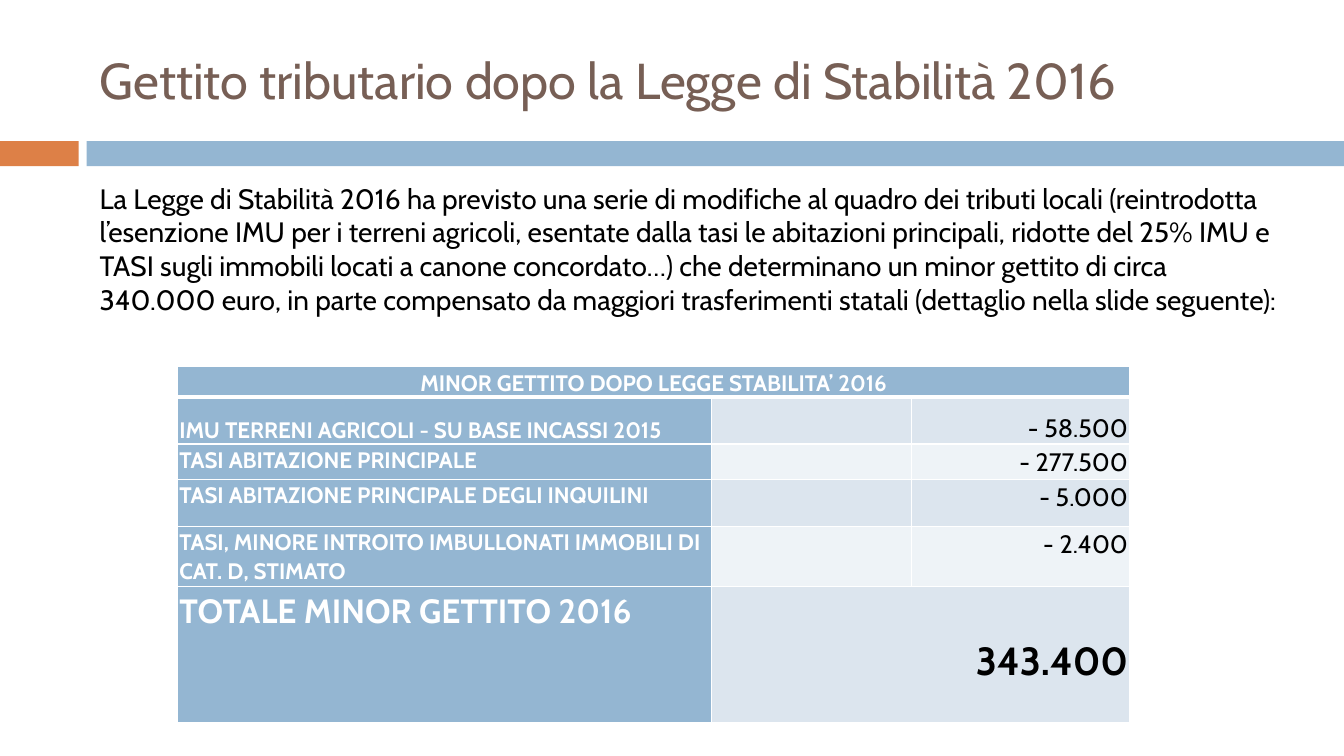
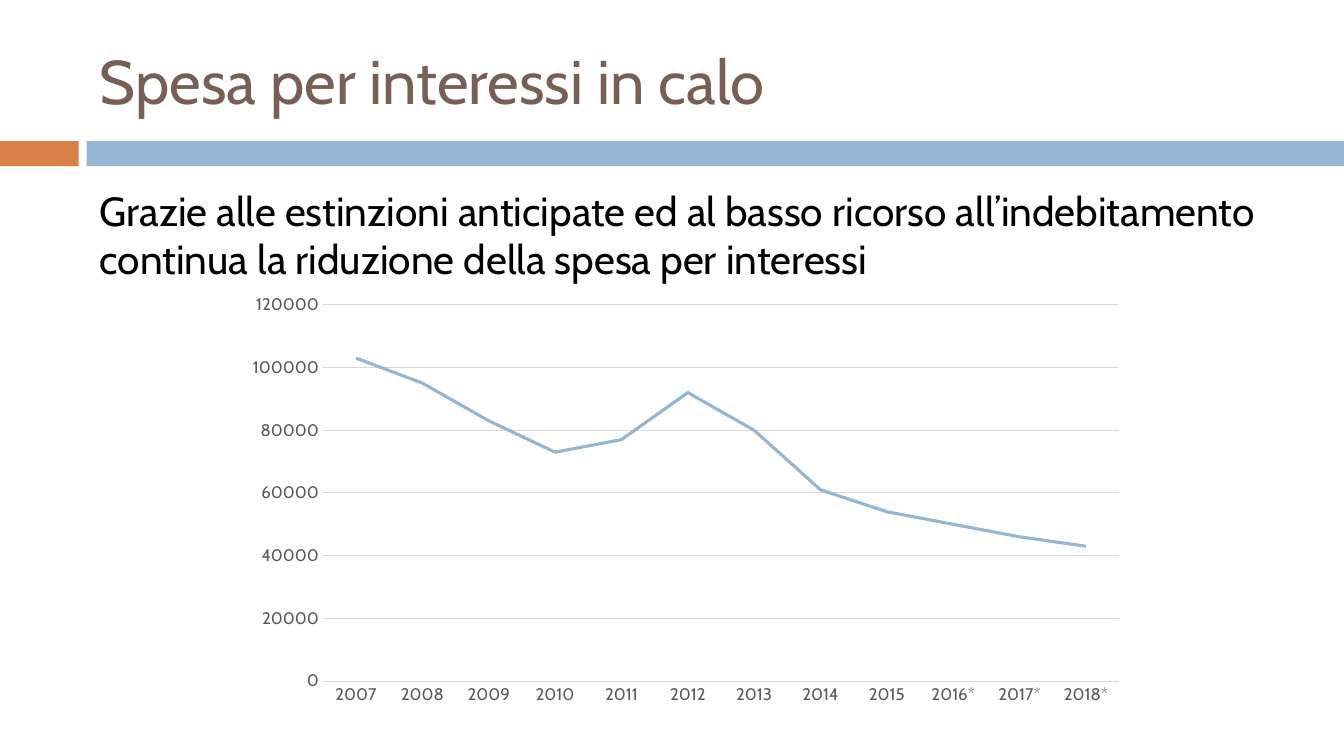
import pptx
import pptx.chart.data
import pptx.dml.color
import pptx.enum.chart
import pptx.enum.shapes
import pptx.enum.text
import pptx.oxml
import pptx.oxml.ns
import pptx.util

FONT = "Cabin"
BLUE, ORANGE, BROWN = "94B6D2", "DD8047", "775F55"
WHITE, BLACK, GREY, GRID = "FFFFFF", "000000", "595959", "D9D9D9"
ROW_FILLS = ("DCE5EE", "EEF3F7")

ALIGN = pptx.enum.text.PP_ALIGN
ANCHOR = pptx.enum.text.MSO_ANCHOR
TICK = pptx.enum.chart.XL_TICK_MARK

LEFT, TEXT_WIDTH = 6.68, 89.2
BAND_TOP, BAND_HEIGHT = 18.67, 3.33


def colour(value):
    return pptx.dml.color.RGBColor.from_string(value)


def style_font(font, size, value, bold=False):
    font.name = FONT
    font.size = pptx.util.Pt(size)
    font.color.rgb = colour(value)
    font.bold = bold


def border_cell(cell, bottom=1):
    """Draw white cell borders, with the bottom width in points; call before filling."""
    for side, points in (("L", 1), ("R", 1), ("T", 1), ("B", bottom)):
        cell._tc.get_or_add_tcPr().append(pptx.oxml.parse_xml(
            f'<a:ln{side} {pptx.oxml.ns.nsdecls("a")} w="{pptx.util.Pt(points)}">'
            f'<a:solidFill><a:srgbClr val="{WHITE}"/></a:solidFill></a:ln{side}>'))


class Deck:
    """Holds the style and the current slide; lengths are percent of the slide's size."""

    def __init__(self):
        self.deck = pptx.Presentation()
        self.deck.slide_width = pptx.util.Inches(13.33)
        self.deck.slide_height = pptx.util.Inches(7.5)
        self.slide = None

    def across(self, share):
        return round(self.deck.slide_width * share / 100)

    def down(self, share):
        return round(self.deck.slide_height * share / 100)

    def area(self, left, top, width, height):
        return self.across(left), self.down(top), self.across(width), self.down(height)

    def new_slide(self, title, size):
        self.slide = self.deck.slides.add_slide(self.deck.slide_layouts[6])
        self.band(0, 5.85, ORANGE)
        self.band(6.45, 93.55, BLUE)
        self.text(title, 3.33, 14.4, size, BROWN, ANCHOR.MIDDLE)

    def band(self, left, width, fill):
        shape = self.slide.shapes.add_shape(
            pptx.enum.shapes.MSO_SHAPE.RECTANGLE,
            *self.area(left, BAND_TOP, width, BAND_HEIGHT))
        shape.shadow.inherit = False
        shape.fill.solid()
        shape.fill.fore_color.rgb = colour(fill)
        shape.line.fill.background()

    def text(self, words, top, height, size, value=BLACK, anchor=ANCHOR.TOP, before=0):
        box = self.slide.shapes.add_textbox(*self.area(LEFT, top, TEXT_WIDTH, height))
        box.text_frame.word_wrap = True
        box.text_frame.vertical_anchor = anchor
        para = box.text_frame.paragraphs[0]
        para.space_before = pptx.util.Pt(before)
        span = para.add_run()
        span.text = words
        style_font(span.font, size, value)

    def table(self, left, top, widths, heights):
        """Add a plain table whose cells have white borders and narrow margins."""
        frame = self.slide.shapes.add_table(
            len(heights), len(widths), *self.area(left, top, sum(widths), sum(heights)))
        table = frame.table
        table.first_row = table.horz_banding = False
        for column, width in zip(table.columns, widths):
            column.width = self.across(width)
        for index, (row, height) in enumerate(zip(table.rows, heights)):
            row.height = self.down(height)
            for cell in row.cells:
                border_cell(cell, bottom=3 if index == 0 else 1)
                cell.margin_left = cell.margin_right = pptx.util.Inches(0.02)
                cell.margin_top = pptx.util.Inches(0.01)
                cell.margin_bottom = 0
        return table

    def cell(self, cell, fill, words="", size=16, value=WHITE, bold=True,
             align=ALIGN.LEFT, anchor=ANCHOR.TOP):
        cell.fill.solid()
        cell.fill.fore_color.rgb = colour(fill)
        cell.vertical_anchor = anchor
        if words:
            para = cell.text_frame.paragraphs[0]
            para.alignment = align
            para.line_spacing = 1.07
            para.space_before = pptx.util.Pt(2)
            span = para.add_run()
            span.text = words
            style_font(span.font, size, value, bold)

    def line_chart(self, place, name, points, top_value, step):
        data = pptx.chart.data.CategoryChartData()
        data.categories = list(points)
        data.add_series(name, list(points.values()))
        chart = self.slide.shapes.add_chart(
            pptx.enum.chart.XL_CHART_TYPE.LINE, *self.area(*place), data).chart
        chart.has_legend = chart.has_title = False
        style_font(chart.font, 10, BLACK)

        plot = chart.plots[0]
        plot.vary_by_categories = False
        series = plot.series[0]
        series.smooth = False
        series.marker.style = pptx.enum.chart.XL_MARKER_STYLE.NONE
        series.format.line.color.rgb = colour(BLUE)
        series.format.line.width = pptx.util.Pt(2.25)

        years, amounts = chart.category_axis, chart.value_axis
        for axis in (years, amounts):
            axis.major_tick_mark = axis.minor_tick_mark = TICK.NONE
            style_font(axis.tick_labels.font, 12, GREY)
        amounts.minimum_scale, amounts.maximum_scale = 0, top_value
        amounts.major_unit = step
        amounts.has_major_gridlines = True
        amounts.format.line.fill.background()
        for line in (years.format.line, amounts.major_gridlines.format.line):
            line.color.rgb = colour(GRID)
            line.width = pptx.util.Pt(0.75)


def revenue_slide(deck):
    deck.new_slide("Gettito tributario dopo la Legge di Stabilità 2016", 36)
    deck.text(
        "La Legge di Stabilità 2016 ha previsto una serie di modifiche al quadro dei "
        "tributi locali (reintrodotta l’esenzione IMU per i terreni agricoli, esentate "
        "dalla tasi le abitazioni principali, ridotte del 25% IMU e TASI sugli immobili "
        "locati a canone concordato…) che determinano un minor gettito di circa 340.000 "
        "euro, in parte compensato da maggiori trasferimenti statali (dettaglio nella "
        "slide seguente):", 23.33, 26.93, 20, before=7)

    losses = (
        ("IMU TERRENI AGRICOLI - SU BASE INCASSI 2015", "- 58.500", ANCHOR.BOTTOM),
        ("TASI ABITAZIONE PRINCIPALE", "- 277.500", ANCHOR.TOP),
        ("TASI ABITAZIONE PRINCIPALE DEGLI INQUILINI", "- 5.000", ANCHOR.TOP),
        ("TASI, MINORE INTROITO IMBULLONATI IMMOBILI DI CAT. D, STIMATO", "- 2.400",
         ANCHOR.TOP),
    )
    table = deck.table(13.2, 48.53, (39.75, 14.85, 16.28), (4, 6.2, 4.65, 6.25, 8, 17.9))
    header = table.cell(0, 0)
    header.merge(table.cell(0, 2))
    deck.cell(header, BLUE, "MINOR GETTITO DOPO LEGGE STABILITA’ 2016", align=ALIGN.CENTER)
    for index, (label, amount, anchor) in enumerate(losses):
        name, gap, figure = table.rows[index + 1].cells
        fill = ROW_FILLS[index % 2]
        deck.cell(name, BLUE, label, anchor=anchor)
        deck.cell(gap, fill)
        deck.cell(figure, fill, amount, 18, BLACK, False, ALIGN.RIGHT, anchor)

    last = len(losses) + 1
    deck.cell(table.cell(last, 0), BLUE, "TOTALE MINOR GETTITO 2016", 24)
    total = table.cell(last, 1)
    total.merge(table.cell(last, 2))
    total.margin_top = pptx.util.Inches(0.1)
    deck.cell(total, ROW_FILLS[0], "343.400", 28, BLACK, True, ALIGN.RIGHT, ANCHOR.MIDDLE)


def interest_slide(deck):
    deck.new_slide("Spesa per interessi in calo", 44)
    deck.text(
        "Grazie alle estinzioni anticipate ed al basso ricorso all’indebitamento "
        "continua la riduzione della spesa per interessi", 23.87, 14, 29, before=7)
    spending = {
        "2007": 103000, "2008": 95000, "2009": 83000, "2010": 73000,
        "2011": 77000, "2012": 92000, "2013": 80000, "2014": 61000,
        "2015": 54000, "2016*": 50000, "2017*": 46000, "2018*": 43000,
    }
    deck.line_chart((17.48, 37.87, 67.13, 56.53), "Spesa per interessi", spending,
                    120000, 20000)


def main():
    deck = Deck()
    revenue_slide(deck)
    interest_slide(deck)
    deck.deck.save("out.pptx")


if __name__ == "__main__":
    main()
